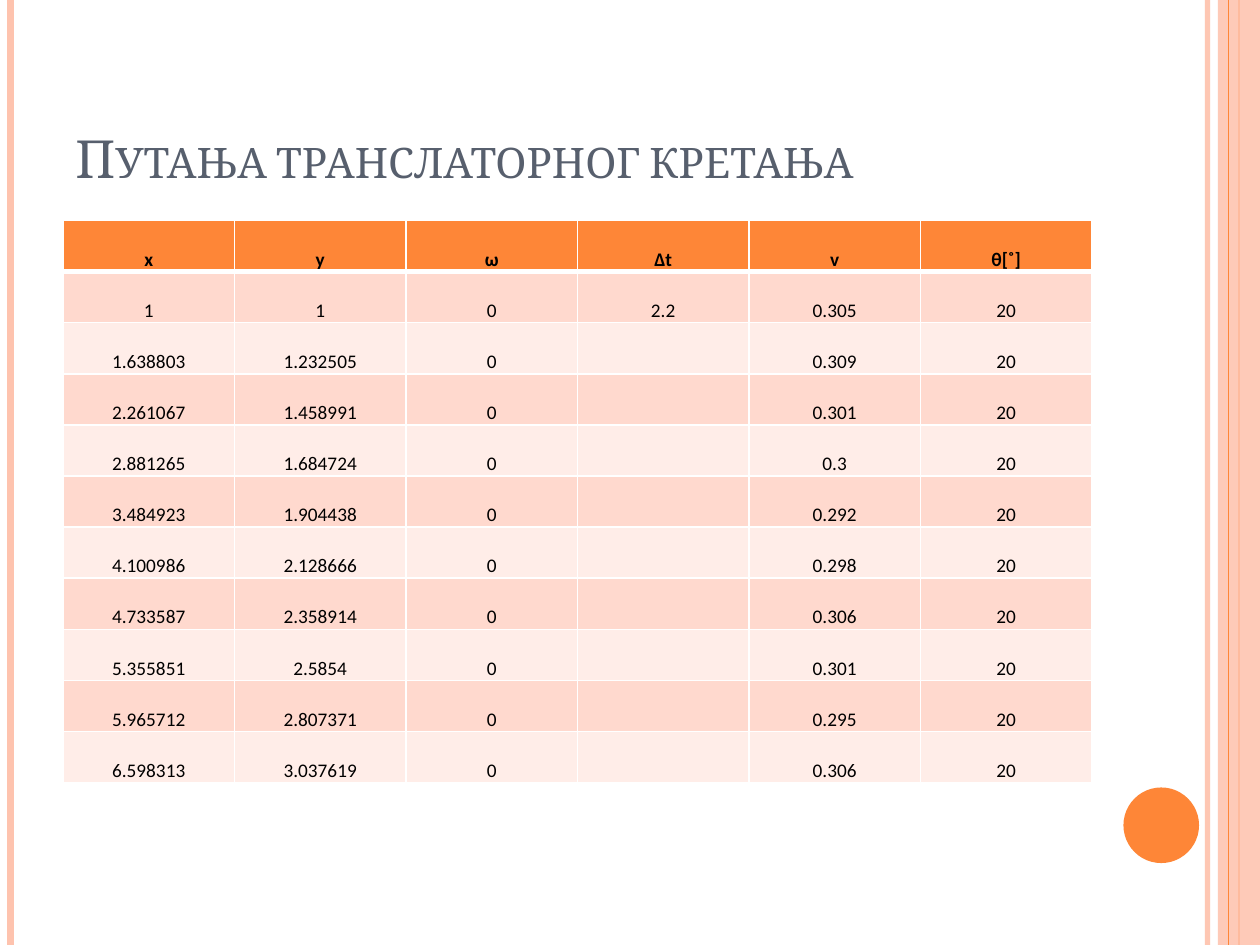
from typing import Any, NamedTuple

from lxml import etree
from pptx import Presentation
from pptx import util as u
from pptx.dml.color import RGBColor
from pptx.enum import shapes, text
from pptx.oxml import ns

Pt = u.Pt
WHITE = RGBColor(0xFF, 0xFF, 0xFF)
BLACK = RGBColor(0, 0, 0)
ORANGE = RGBColor(0xFE, 0x86, 0x37)
PEACH = RGBColor(0xFE, 0xC3, 0xAE)
SLATE = RGBColor(0x57, 0x5F, 0x6D)
BANDS = (RGBColor(0xFF, 0xD9, 0xCE), RGBColor(0xFF, 0xED, 0xE8))
SLIDE_W, SLIDE_H = 720, 540
LEFT, CONTENT_W = 36, 588
ROW_H = 29.2


class Stripe(NamedTuple):
    x: float
    weight: float
    color: RGBColor
    opacity: int = 100


class Panel(NamedTuple):
    preset: shapes.MSO_SHAPE
    box: tuple[float, float, float, float]
    color: RGBColor
    opacity: int = 100


class PathPoint(NamedTuple):
    x: str
    y: str
    omega: str
    dt: str
    v: str
    theta: str


# Back to front; the band lies over the third stripe
DECORATION = (
    Stripe(690, 3, PEACH, 93),
    Stripe(6, 4.5, PEACH),
    Stripe(708, 1.5, ORANGE),
    Panel(shapes.MSO_SHAPE.RECTANGLE, (696, 0, 24, SLIDE_H), PEACH, 87),
    Stripe(702, 0.75, ORANGE),
    Panel(shapes.MSO_SHAPE.OVAL, (642, 450, 43.2, 43.2), ORANGE),
)

HEADER = PathPoint("x", "y", "ω", "∆t", "v", "θ[˚]")
POSITIONS = (
    ("1", "1", "0.305"),
    ("1.638803", "1.232505", "0.309"),
    ("2.261067", "1.458991", "0.301"),
    ("2.881265", "1.684724", "0.3"),
    ("3.484923", "1.904438", "0.292"),
    ("4.100986", "2.128666", "0.298"),
    ("4.733587", "2.358914", "0.306"),
    ("5.355851", "2.5854", "0.301"),
    ("5.965712", "2.807371", "0.295"),
    ("6.598313", "3.037619", "0.306"),
)
# The time step is given only at the first point
PATH_POINTS = [PathPoint(x, y, "0", "" if i else "2.2", v, "20")
               for i, (x, y, v) in enumerate(POSITIONS)]

TITLE_FONT = {"name": "Cambria", "size": Pt(30)}
CELL_FONT = {"name": "Calibri", "size": Pt(11)}
CELL_FORMAT = {
    "margin_left": Pt(5), "margin_right": Pt(5),
    "margin_top": 0, "margin_bottom": 0,
    "vertical_anchor": text.MSO_ANCHOR.BOTTOM,
}


def apply(target: Any, values: dict[str, Any]) -> None:
    for key, value in values.items():
        setattr(target, key, value)


def add_run(paragraph: Any, words: str, color: RGBColor, font: dict[str, Any]) -> Any:
    run = paragraph.add_run()
    run.text = words
    apply(run.font, font)
    run.font.color.rgb = color
    return run


def set_opacity(element: Any, percent: int) -> None:
    if percent < 100:
        color = next(element.iter(ns.qn("a:srgbClr")))
        etree.SubElement(color, ns.qn("a:alpha"), val=str(percent * 1000))


def draw_stripe(slide: Any, stripe: Stripe) -> None:
    line = slide.shapes.add_connector(
        shapes.MSO_CONNECTOR.STRAIGHT, Pt(stripe.x), 0, Pt(stripe.x), Pt(SLIDE_H))
    line.line.width = Pt(stripe.weight)
    line.line.color.rgb = stripe.color
    properties = line._element.spPr
    set_opacity(properties, stripe.opacity)
    etree.SubElement(properties, ns.qn("a:effectLst"))


def draw_panel(slide: Any, panel: Panel) -> None:
    shape = slide.shapes.add_shape(panel.preset, *map(Pt, panel.box))
    shape.shadow.inherit = False
    shape.fill.solid()
    shape.fill.fore_color.rgb = panel.color
    shape.line.fill.background()
    set_opacity(shape._element.spPr, panel.opacity)


def draw_title(slide: Any, words: str) -> None:
    frame = slide.shapes.add_textbox(
        Pt(LEFT), Pt(21.6), Pt(CONTENT_W), Pt(90)).text_frame
    apply(frame, {"word_wrap": True, "vertical_anchor": text.MSO_ANCHOR.BOTTOM})
    run = add_run(frame.paragraphs[0], words, SLATE, TITLE_FONT)
    run.font._element.set("cap", "small")


def set_borders(cell: Any, top: float, bottom: float) -> None:
    properties = cell._tc.get_or_add_tcPr()
    sides = {"lnL": 1, "lnR": 1, "lnT": top, "lnB": bottom}
    for position, (side, weight) in enumerate(sides.items()):
        line = etree.Element(ns.qn(f"a:{side}"), w=str(Pt(weight)))
        fill = etree.SubElement(line, ns.qn("a:solidFill"))
        etree.SubElement(fill, ns.qn("a:srgbClr"), val=str(WHITE))
        properties.insert(position, line)


def draw_table(slide: Any, rows: list[PathPoint]) -> None:
    columns = len(HEADER)
    table = slide.shapes.add_table(
        len(rows), columns, Pt(LEFT), Pt(126), Pt(CONTENT_W), Pt(ROW_H * len(rows))).table
    for column in table.columns:
        column.width = Pt(CONTENT_W / columns)
    for r, point in enumerate(rows):
        table.rows[r].height = Pt(ROW_H)
        for c, value in enumerate(point):
            cell = table.cell(r, c)
            apply(cell, CELL_FORMAT)
            cell.fill.solid()
            cell.fill.fore_color.rgb = BANDS[(r - 1) % 2] if r else ORANGE
            set_borders(cell, top=3 if r == 1 else 1, bottom=1 if r else 3)
            paragraph = cell.text_frame.paragraphs[0]
            paragraph.alignment = text.PP_ALIGN.CENTER
            if value:
                add_run(paragraph, value, BLACK, CELL_FONT | {"bold": r == 0})


def main() -> None:
    deck = Presentation()
    apply(deck, {"slide_width": Pt(SLIDE_W), "slide_height": Pt(SLIDE_H)})
    slide = deck.slides.add_slide(deck.slide_layouts[6])
    slide.background.fill.solid()
    slide.background.fill.fore_color.rgb = WHITE

    # Side stripes and circle
    for part in DECORATION:
        draw = draw_stripe if isinstance(part, Stripe) else draw_panel
        draw(slide, part)

    # Heading and path data
    draw_title(slide, "Путања транслаторног кретања")
    draw_table(slide, [HEADER, *PATH_POINTS])
    deck.save("out.pptx")


if __name__ == "__main__":
    main()
